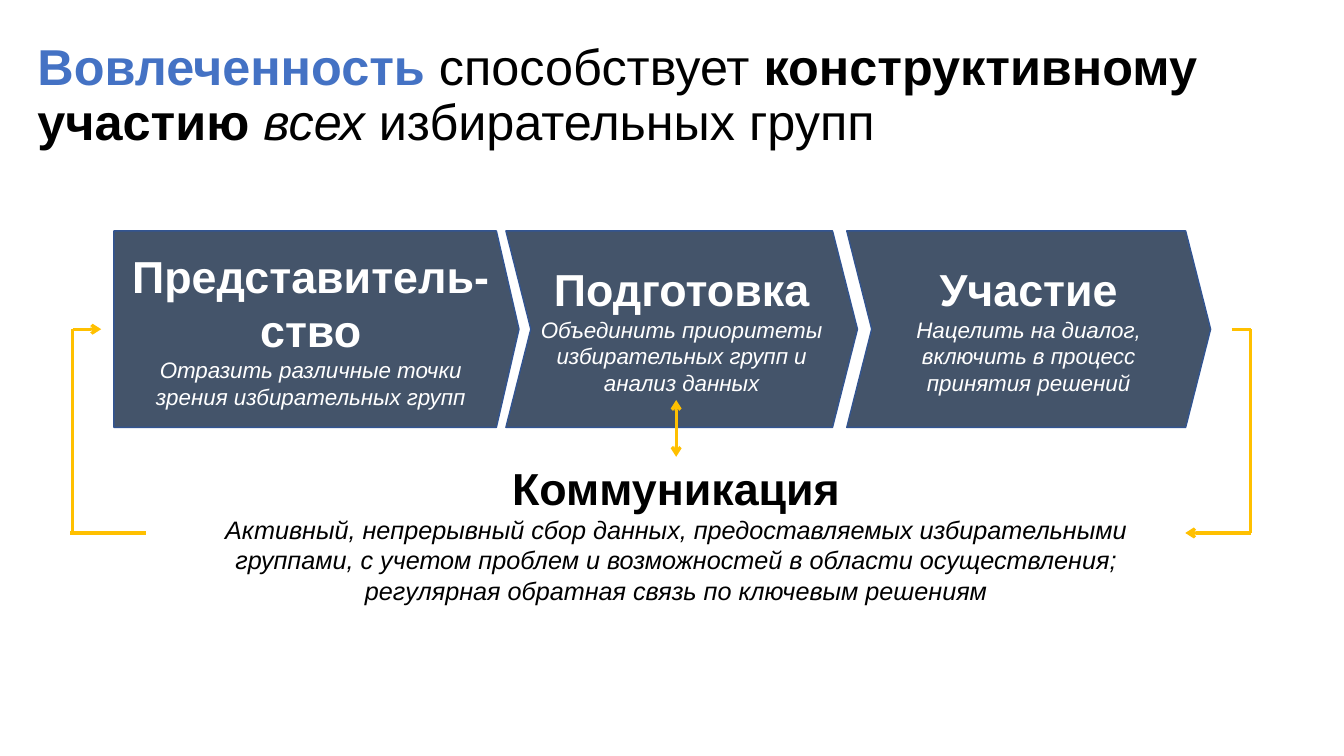
from dataclasses import dataclass
from typing import Any

from lxml import etree
from pptx import Presentation
from pptx.dml.color import RGBColor
from pptx.enum.shapes import MSO_CONNECTOR, MSO_SHAPE
from pptx.enum.text import MSO_ANCHOR, MSO_AUTO_SIZE, PP_ALIGN
from pptx.oxml.ns import qn
from pptx.util import Cm, Pt

STRAIGHT = MSO_CONNECTOR.STRAIGHT
PENTAGON, CHEVRON, RECTANGLE = MSO_SHAPE.PENTAGON, MSO_SHAPE.CHEVRON, MSO_SHAPE.RECTANGLE
TOP, MIDDLE = MSO_ANCHOR.TOP, MSO_ANCHOR.MIDDLE
LEFT, CENTER = PP_ALIGN.LEFT, PP_ALIGN.CENTER
NO_AUTOFIT = MSO_AUTO_SIZE.NONE
TITLE_ONLY = 5
TOP_SIDE = 0


@dataclass(frozen=True)
class Theme:
    font: str = "Arial"
    accent: str = "4472C4"
    ink: str = "000000"
    paper: str = "FFFFFF"
    step: str = "44546A"
    step_edge: str = "325491"
    arrow: str = "FFC000"
    title_size: int = 36
    heading_size: int = 32
    step_size: int = 16
    panel_size: int = 18
    edge_width: float = 1
    arrow_width: float = 2.25


@dataclass(frozen=True)
class Block:
    kind: Any
    box: tuple[float, float, float, float]
    heading: str
    detail: str
    detail_size: int
    fill: str
    text_color: str
    edge: str | None = None
    point: float | None = None
    inset: float = 0.25


@dataclass(frozen=True)
class Link:
    start: tuple[float, float]
    end: tuple[float, float]
    head: bool = False
    tail: bool = False


@dataclass(frozen=True)
class Phrase:
    text: str
    color: str
    bold: bool = False
    italic: bool = False


THEME = Theme()

# Geometry in centimetres
STEP_TOP, STEP_HEIGHT = 5.82, 4.95
STEP_MID = STEP_TOP + STEP_HEIGHT / 2
PANEL = (4.9, 11.51, 24.28, 3.84)
PANEL_MID = PANEL[1] + PANEL[3] / 2
PANEL_CENTER = PANEL[0] + PANEL[2] / 2
LOOP_LEFT, LOOP_RIGHT = 1.83, 31.52
TITLE_BOX = (0.69, 0.94, 32.49, 3.68)

TITLE = [
    Phrase("Вовлеченность", THEME.accent, bold=True),
    Phrase(" способствует ", THEME.ink),
    Phrase("конструктивному участию ", THEME.ink, bold=True),
    Phrase("всех", THEME.ink, italic=True),
    Phrase(" избирательных групп", THEME.ink),
]


def step(kind: Any, left: float, width: float, point: float,
         heading: str, detail: str) -> Block:
    return Block(kind, (left, STEP_TOP, width, STEP_HEIGHT), heading, detail,
                 THEME.step_size, THEME.step, THEME.paper, THEME.step_edge, point, 0.22)


STEPS = [
    step(PENTAGON, 2.87, 10.21, 0.115, "Представитель-ство",
         "Отразить различные точки зрения избирательных групп"),
    step(CHEVRON, 12.75, 8.86, 0.127, "Подготовка",
         "Объединить приоритеты избирательных групп и анализ данных"),
    step(CHEVRON, 21.34, 9.17, 0.127, "Участие",
         "Нацелить на диалог, включить в процесс принятия решений"),
]
COMMUNICATION = Block(
    RECTANGLE, PANEL, "Коммуникация",
    "Активный, непрерывный сбор данных, предоставляемых избирательными группами, "
    "с учетом проблем и возможностей в области осуществления; "
    "регулярная обратная связь по ключевым решениям",
    THEME.panel_size, THEME.paper, THEME.ink)

LOOP = [
    Link((LOOP_RIGHT, STEP_MID), (LOOP_RIGHT, PANEL_MID)),
    Link((29.87, PANEL_MID), (LOOP_RIGHT, PANEL_MID), head=True),
    Link((LOOP_LEFT, STEP_MID), (LOOP_LEFT, PANEL_MID)),
    Link((3.67, PANEL_MID), (1.76, PANEL_MID)),
    Link((LOOP_LEFT, STEP_MID), (2.55, STEP_MID), tail=True),
    Link((31.04, STEP_MID), (LOOP_RIGHT, STEP_MID)),
]
EXCHANGE = Link((PANEL_CENTER, 10.08), (PANEL_CENTER, PANEL[1]), head=True, tail=True)


def assign(target: Any, formats: dict[str, Any]) -> None:
    for name, value in formats.items():
        setattr(target, name, value)


def add_phrase(paragraph: Any, phrase: Phrase, size: int) -> None:
    run = paragraph.add_run()
    run.text = phrase.text
    assign(run.font, {"name": THEME.font, "size": Pt(size),
                      "bold": phrase.bold, "italic": phrase.italic})
    run.font.color.rgb = RGBColor.from_string(phrase.color)


def write_title(slide: Any) -> None:
    title = slide.shapes.title
    assign(title, dict(zip(("left", "top", "width", "height"), map(Cm, TITLE_BOX))))
    assign(title.text_frame, {"word_wrap": True, "vertical_anchor": TOP,
                              "auto_size": NO_AUTOFIT})
    paragraph = title.text_frame.paragraphs[0]
    assign(paragraph, {"alignment": LEFT, "line_spacing": 0.9})
    for phrase in TITLE:
        add_phrase(paragraph, phrase, THEME.title_size)


def draw_block(slide: Any, block: Block) -> Any:
    shape = slide.shapes.add_shape(block.kind, *map(Cm, block.box))
    shape.shadow.inherit = False
    shape.fill.solid()
    shape.fill.fore_color.rgb = RGBColor.from_string(block.fill)
    if block.edge:
        shape.line.color.rgb = RGBColor.from_string(block.edge)
        shape.line.width = Pt(THEME.edge_width)
    else:
        shape.line.fill.background()
    if block.point is not None:
        shape.adjustments[0] = block.point

    frame = shape.text_frame
    assign(frame, {"word_wrap": True, "vertical_anchor": MIDDLE,
                   "margin_left": Cm(block.inset), "margin_right": Cm(block.inset)})
    heading, detail = frame.paragraphs[0], frame.add_paragraph()
    heading.alignment = detail.alignment = CENTER
    add_phrase(heading, Phrase(block.heading, block.text_color, bold=True),
               THEME.heading_size)
    add_phrase(detail, Phrase(block.detail, block.text_color, italic=True),
               block.detail_size)
    return shape


def draw_link(slide: Any, link: Link) -> Any:
    connector = slide.shapes.add_connector(STRAIGHT, *map(Cm, link.start + link.end))
    connector.line.color.rgb = RGBColor.from_string(THEME.arrow)
    connector.line.width = Pt(THEME.arrow_width)
    properties = connector.line._get_or_add_ln()
    for tag, wanted in (("a:headEnd", link.head), ("a:tailEnd", link.tail)):
        if wanted:
            etree.SubElement(properties, qn(tag), type="arrow")
    etree.SubElement(properties.getparent(), qn("a:effectLst"))
    return connector


def main() -> None:
    deck = Presentation()
    assign(deck, {"slide_width": Cm(33.87), "slide_height": Cm(19.05)})
    slide = deck.slides.add_slide(deck.slide_layouts[TITLE_ONLY])

    write_title(slide)

    # Three steps and the communication panel
    for block in STEPS:
        draw_block(slide, block)
    panel = draw_block(slide, COMMUNICATION)

    # Feedback loop around the steps
    for link in LOOP:
        draw_link(slide, link)
    draw_link(slide, EXCHANGE).end_connect(panel, TOP_SIDE)

    deck.save("out.pptx")


if __name__ == "__main__":
    main()
